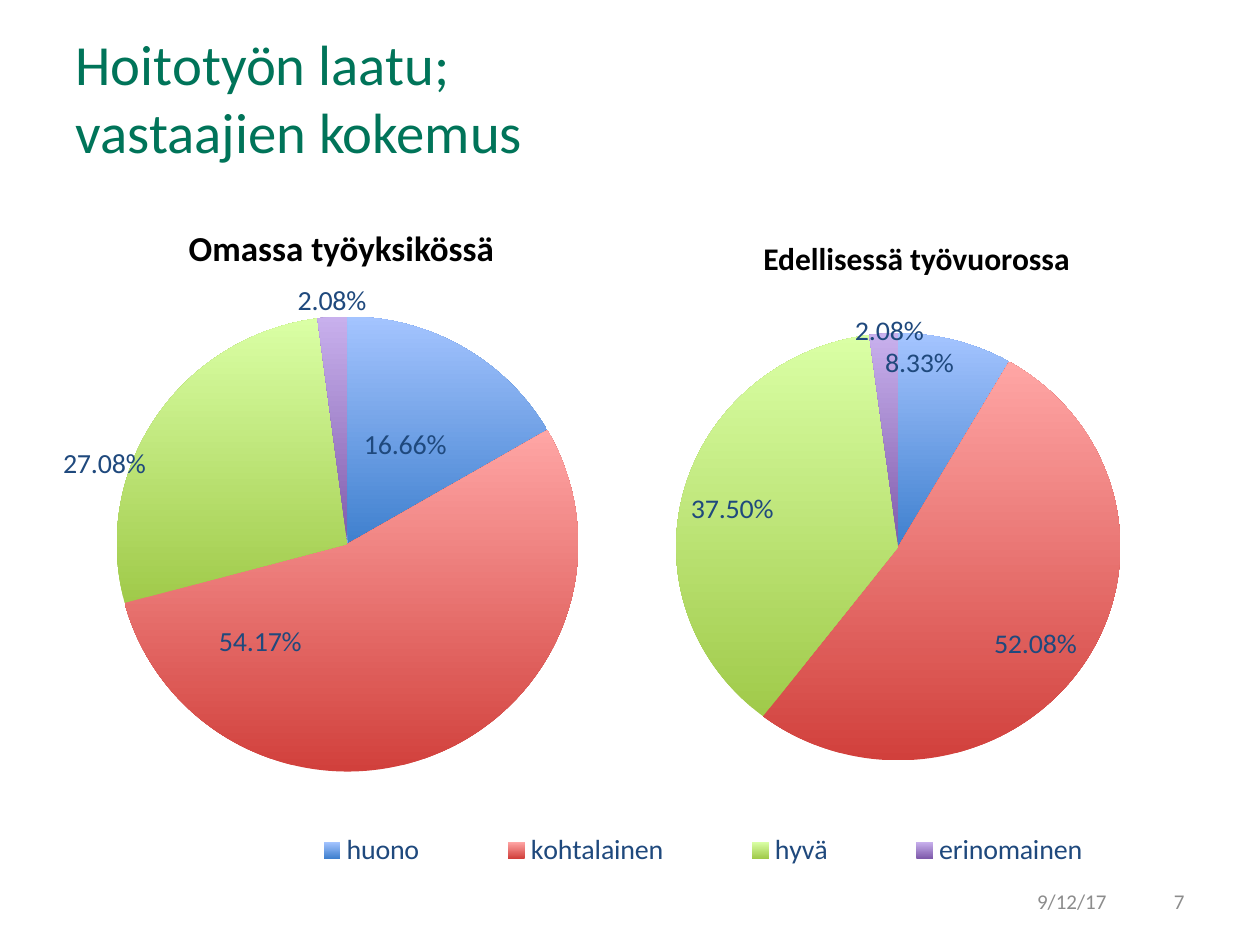
from dataclasses import dataclass, field

import lxml.etree
import pptx
import pptx.chart.data
import pptx.dml.color
import pptx.enum.chart
import pptx.enum.text
import pptx.oxml
import pptx.oxml.ns
import pptx.util

Pt = pptx.util.Pt
RGB = pptx.dml.color.RGBColor
Align = pptx.enum.text.PP_ALIGN
Anchor = pptx.enum.text.MSO_ANCHOR
LabelPos = pptx.enum.chart.XL_LABEL_POSITION
qn = pptx.oxml.ns.qn

FONT = "Calibri"
GREEN = RGB(0x00, 0x74, 0x59)
BLACK = RGB(0x00, 0x00, 0x00)
NAVY = RGB(0x1F, 0x49, 0x7D)
GRAY = RGB(0x8C, 0x8C, 0x8C)
# Dark and light end of each slice
SLICES = [
    (RGB(0x3F, 0x80, 0xCE), RGB(0xA4, 0xC4, 0xFF)),
    (RGB(0xD1, 0x40, 0x3C), RGB(0xFF, 0xA6, 0xA5)),
    (RGB(0xA0, 0xCA, 0x4A), RGB(0xDA, 0xFF, 0xA5)),
    (RGB(0x7F, 0x5B, 0xAB), RGB(0xC8, 0xB0, 0xED)),
]
RATINGS = ["huono", "kohtalainen", "hyvä", "erinomainen"]
PERCENT = "0.00%"


@dataclass
class Label:
    position: LabelPos
    offset: tuple[float, float] | None = None


@dataclass
class Pie:
    box: tuple[float, float, float, float]
    plot: tuple[float, float, float, float]
    categories: list[str]
    shares: list[float]
    labels: dict[int, Label] = field(default_factory=dict)
    default_position: LabelPos = LabelPos.BEST_FIT
    legend: tuple[float, float, float, float] | None = None


PIES = [
    Pie((36, 157.7, 627.8, 356.4), (0.049, 0.052, 0.42, 0.74), RATINGS,
        [0.1666, 0.5417, 0.2708, 0.0208],
        {0: Label(LabelPos.CENTER),
         1: Label(LabelPos.BEST_FIT, (-0.2, -0.22)),
         2: Label(LabelPos.BEST_FIT, (-0.01, 0.11))},
        LabelPos.OUTSIDE_END, (0.165, 0.88, 0.835, 0.08)),
    Pie((329.8, 167.8, 344.9, 323.3), (0.164, 0.023, 0.736, 0.805),
        ["1", "2", "3", "4"], [0.0833, 0.5208, 0.375, 0.0208],
        {3: Label(LabelPos.BEST_FIT, (0.01, 0.025))},
        LabelPos.INSIDE_END),
]


def set_font(font, size: float, color: RGB, bold: bool = False) -> None:
    font.name, font.size, font.bold = FONT, Pt(size), bold
    font.color.rgb = color


def write(shape, text: str, *, size: float, color: RGB, bold: bool = False,
          align: Align = Align.LEFT, anchor: Anchor = Anchor.TOP) -> None:
    frame = shape.text_frame
    frame.text = text
    frame.word_wrap = True
    frame.auto_size = pptx.enum.text.MSO_AUTO_SIZE.NONE
    frame.vertical_anchor = anchor
    paragraph = frame.paragraphs[0]
    paragraph.alignment = align
    for run in paragraph.runs:
        set_font(run.font, size, color, bold)


def manual_layout(values: tuple[float, ...], *, absolute: bool, inner: bool = False):
    layout = pptx.oxml.parse_xml(
        f'<c:layout {pptx.oxml.ns.nsdecls("c")}><c:manualLayout/></c:layout>')
    entries = [("layoutTarget", "inner")] if inner else []
    if absolute:
        entries += [("xMode", "edge"), ("yMode", "edge")]
    entries += zip("xywh", values)
    for tag, value in entries:
        lxml.etree.SubElement(layout[0], qn(f"c:{tag}")).set("val", str(value))
    return layout


def replace_layout(parent, layout, index: int) -> None:
    for old in parent.findall(qn("c:layout")):
        parent.remove(old)
    parent.insert(index, layout)


def add_point_label(point, label: Label) -> None:
    data_label = point.data_label
    set_font(data_label.font, 16, NAVY)
    data_label.position = label.position
    element = data_label._dLbl
    number_format = pptx.oxml.parse_xml(
        f'<c:numFmt {pptx.oxml.ns.nsdecls("c")} formatCode="{PERCENT}" sourceLinked="0"/>')
    element.insert(1, number_format)
    if label.offset:
        replace_layout(element, manual_layout(label.offset, absolute=False), 1)


def add_pie(slide, pie: Pie) -> None:
    data = pptx.chart.data.CategoryChartData(number_format=PERCENT)
    data.categories = pie.categories
    data.add_series("Series 1", pie.shares)
    chart = slide.shapes.add_chart(
        pptx.enum.chart.XL_CHART_TYPE.PIE, *map(Pt, pie.box), data).chart
    set_font(chart.font, 16, BLACK)
    chart.has_title = False
    chart.has_legend = pie.legend is not None
    if pie.legend:
        legend = chart.legend
        legend.position = pptx.enum.chart.XL_LEGEND_POSITION.BOTTOM
        legend.include_in_layout = False
        set_font(legend.font, 16, NAVY)
        replace_layout(legend._element, manual_layout(pie.legend, absolute=True), 1)

    # Slices and their labels
    plot = chart.plots[0]
    plot.vary_by_categories = True
    series = plot.series[0]
    labels = series.data_labels
    labels.show_value = True
    labels.number_format, labels.number_format_is_linked = PERCENT, False
    labels.position = pie.default_position
    set_font(labels.font, 16, NAVY)
    for index, colors in enumerate(SLICES):
        fill = series.points[index].format.fill
        fill.gradient()
        fill.gradient_angle = 90
        for stop, color in zip(fill.gradient_stops, colors):
            stop.color.rgb = color
    for index, label in pie.labels.items():
        add_point_label(series.points[index], label)

    # Plot place and clear background
    space = chart._chartSpace
    replace_layout(space.find(".//" + qn("c:plotArea")),
                   manual_layout(pie.plot, absolute=True, inner=True), 0)
    space.find(qn("c:chart")).addnext(pptx.oxml.parse_xml(
        f'<c:spPr {pptx.oxml.ns.nsdecls("c", "a")}><a:noFill/>'
        '<a:ln><a:noFill/></a:ln></c:spPr>'))


def add_text(slide, box: tuple[float, ...], text: str, **style) -> None:
    write(slide.shapes.add_textbox(*map(Pt, box)), text, **style)


def main() -> None:
    deck = pptx.Presentation()
    deck.slide_width, deck.slide_height = Pt(720), Pt(540)
    slide = deck.slides.add_slide(deck.slide_layouts[5])

    # Title
    title = slide.shapes.title
    title.left, title.top, title.width, title.height = map(Pt, (36, 21.6, 442.8, 67.7))
    write(title, "Hoitotyön laatu; \vvastaajien kokemus", size=32.4, color=GREEN,
          anchor=Anchor.MIDDLE)

    # Pies with their headings
    heading = dict(color=BLACK, bold=True, align=Align.CENTER)
    add_text(slide, (36, 126, 318.2, 356.4), "Omassa työyksikössä", size=20, **heading)
    add_text(slide, (363.6, 133.2, 320.4, 28.8), "Edellisessä työvuorossa",
             size=18, **heading)
    for pie in PIES:
        add_pie(slide, pie)

    # Footer
    footer = dict(size=12, color=GRAY, align=Align.RIGHT, anchor=Anchor.MIDDLE)
    add_text(slide, (640.1, 500.4, 43.9, 28.8), "7", **footer)
    add_text(slide, (471.6, 500.4, 167.8, 28.8), "9/12/17", **footer)

    deck.save("out.pptx")


if __name__ == "__main__":
    main()
